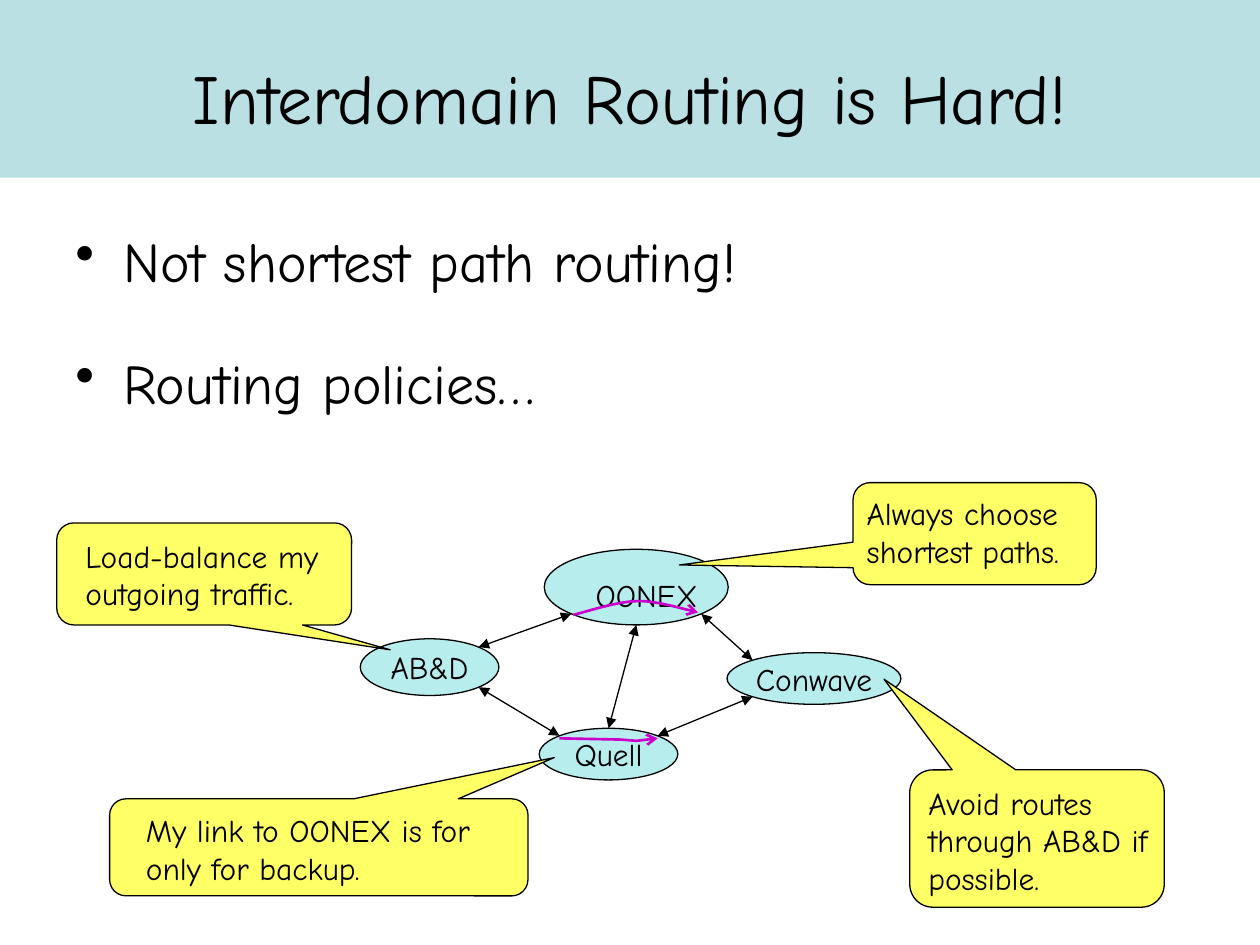
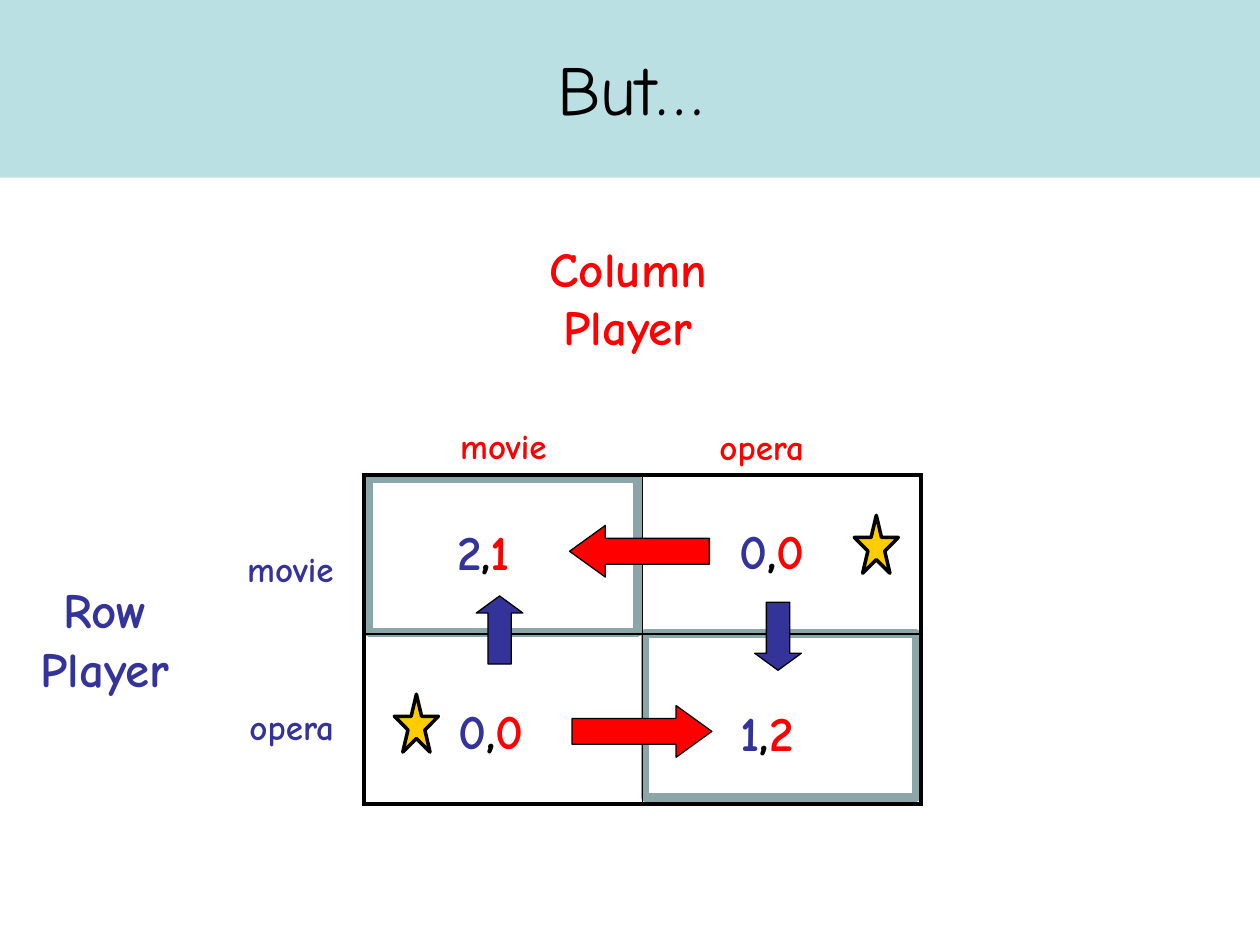
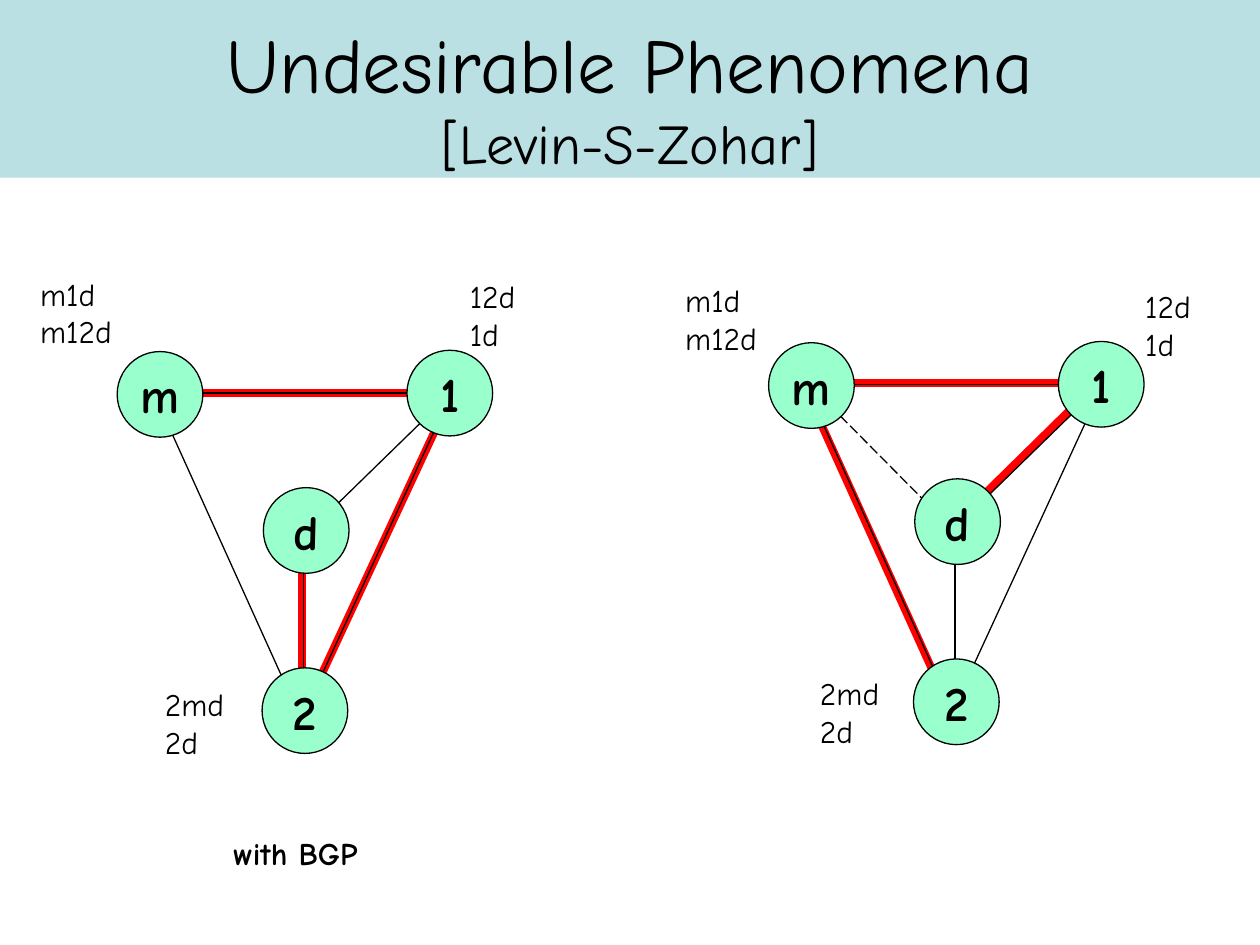
from pptx import Presentation
from pptx.dml.color import RGBColor
from pptx.enum.dml import MSO_LINE
from pptx.enum.shapes import MSO_CONNECTOR, MSO_SHAPE
from pptx.enum.text import MSO_ANCHOR, PP_ALIGN
from pptx.oxml.ns import qn
from pptx.util import Inches, Pt
from lxml import etree

RECT = MSO_SHAPE.RECTANGLE
OVAL = MSO_SHAPE.OVAL
BUBBLE = MSO_SHAPE.ROUNDED_RECTANGULAR_CALLOUT
DOWN = MSO_SHAPE.DOWN_ARROW
RIGHT = MSO_SHAPE.RIGHT_ARROW
STAR = MSO_SHAPE.STAR_5_POINT
STRAIGHT = MSO_CONNECTOR.STRAIGHT
DASH = MSO_LINE.LONG_DASH
CENTER, LEFT = PP_ALIGN.CENTER, PP_ALIGN.LEFT
TOP, MIDDLE, BOTTOM = MSO_ANCHOR.TOP, MSO_ANCHOR.MIDDLE, MSO_ANCHOR.BOTTOM

FONT = "Comic Neue"
BLACK, RED, BLUE = "000000", "FF0000", "333399"
BAND, TEAL, YELLOW = "BBE0E3", "33CCCC", "FFFF66"
MINT, GOLD, GRAY, PURPLE = "99FFCC", "FFCC00", "8AA6A8", "CC00CC"
DIAG = 0.5 ** 0.5


def rgb(code):
    return RGBColor.from_string(code)


def add_tag(parent, tag, **attrs):
    return etree.SubElement(parent, qn(tag), attrs)


def write(frame, paras, size=18, color=BLACK, bold=False, align=LEFT,
          anchor=TOP, wrap=True, gap=0, bullet=None):
    frame.word_wrap = wrap
    frame.vertical_anchor = anchor
    for i, runs in enumerate(paras):
        para = frame.paragraphs[0] if i == 0 else frame.add_paragraph()
        para.alignment = align
        para.space_before = Pt(gap if i else 0)
        if bullet:
            props = para._p.get_or_add_pPr()
            props.set("marL", str(Inches(0.38)))
            props.set("indent", str(-Inches(0.38)))
            add_tag(props, "a:buChar", char=bullet)
        for part in [(runs, {})] if isinstance(runs, str) else runs:
            words, own = part
            run = para.add_run()
            run.text = words
            run.font.name = FONT
            run.font.size = Pt(own.get("size", size))
            run.font.bold = bold
            run.font.color.rgb = rgb(own.get("color", color))


def add_text(slide, box, *paras, **style):
    area = slide.shapes.add_textbox(*map(Inches, box))
    write(area.text_frame, paras, **style)


def add_form(slide, kind, box, fill=None, line=BLACK, width=0.75,
             turn=0, adj=(), alpha=None):
    form = slide.shapes.add_shape(kind, *map(Inches, box))
    form.shadow.inherit = False
    form.rotation = turn
    for i, value in enumerate(adj):
        form.adjustments[i] = value
    if fill:
        form.fill.solid()
        form.fill.fore_color.rgb = rgb(fill)
        if alpha:
            tint = form._element.spPr.find(qn("a:solidFill"))[0]
            add_tag(tint, "a:alpha", val=str(alpha * 1000))
    else:
        form.fill.background()
    if line:
        form.line.color.rgb = rgb(line)
        form.line.width = Pt(width)
    else:
        form.line.fill.background()
    return form


def add_head(form, head=None, tail=None):
    line = form._element.spPr.find(qn("a:ln"))
    for tag, kind in (("a:headEnd", head), ("a:tailEnd", tail)):
        if kind:
            add_tag(line, tag, type=kind)


def add_line(slide, start, end, color=BLACK, width=0.75, dash=None):
    link = slide.shapes.add_connector(STRAIGHT, *map(Inches, (*start, *end)))
    link.line.color.rgb = rgb(color)
    link.line.width = Pt(width)
    if dash:
        link.line.dash_style = dash
    add_tag(link._element.spPr, "a:effectLst")
    return link


def bend(a, b, c, d, steps=8):
    for i in range(1, steps + 1):
        t = i / steps
        u = 1 - t
        yield tuple(u**3 * p + 3 * u * u * t * q + 3 * u * t * t * r + t**3 * s
                    for p, q, r, s in zip(a, b, c, d))


def add_trail(slide, start, points):
    pen = slide.shapes.build_freeform(*map(Inches, start))
    pen.add_line_segments([(Inches(x), Inches(y)) for x, y in points],
                          close=False)
    trail = pen.convert_to_shape()
    trail.shadow.inherit = False
    trail.fill.background()
    trail.line.color.rgb = rgb(PURPLE)
    trail.line.width = Pt(1.5)
    add_head(trail, tail="arrow")


def new_slide(deck, *title, top=0.14, size=40):
    slide = deck.slides.add_slide(deck.slide_layouts[6])
    add_form(slide, RECT, (0, 0, 10, 1.41), BAND, None)
    add_text(slide, (0.5, top, 9, 1.25), *title, size=size, align=CENTER,
             anchor=MIDDLE)
    return slide


def rim(box, right, down):
    left, top, width, height = box
    scale = DIAG if right and down else 1
    return (left + width / 2 * (1 + right * scale),
            top + height / 2 * (1 + down * scale))


def add_note(slide, box, tip, area, *lines):
    add_form(slide, BUBBLE, box, YELLOW, turn=180, adj=(*tip, 0.167))
    add_text(slide, area, *lines)


def hard_slide(deck):
    slide = new_slide(deck, "Interdomain Routing is Hard!")
    add_text(slide, (0.5, 1.75, 9, 4.95), "Not shortest path routing!",
             "Routing policies…", size=32, gap=31, bullet="•")

    west = (2.86, 5.07, 1.1, 0.45)
    south = (4.28, 5.78, 1.1, 0.41)
    north = (4.32, 4.36, 1.46, 0.6)
    east = (5.77, 5.18, 1.38, 0.41)
    for box, name in ((west, "AB&D"), (south, "Quell"), (north, None),
                      (east, "Conwave")):
        node = add_form(slide, OVAL, box, TEAL, alpha=35)
        if name:
            write(node.text_frame, [name], align=CENTER, anchor=MIDDLE,
                  wrap=False)
    add_text(slide, (4.63, 4.52, 1.1, 0.4), "OONEX")

    for start, end in ((rim(south, 1, -1), rim(east, -1, 1)),
                       (rim(west, 1, -1), rim(north, -1, 1)),
                       (rim(west, 1, 1), rim(south, -1, -1)),
                       (rim(south, 0, -1), rim(north, 0, 1)),
                       (rim(east, -1, -1), rim(north, 1, 1))):
        add_head(add_line(slide, start, end), "triangle", "triangle")

    start, peak = (4.55, 4.88), (5.07, 4.77)
    add_trail(slide, start, [
        *bend(start, (4.64, 4.86), (4.9, 4.77), peak),
        *bend(peak, (5.23, 4.77), (5.44, 4.84), (5.54, 4.86))])
    add_trail(slide, (4.44, 5.86), [(4.93, 5.87), (5.05, 5.88), (5.22, 5.86)])

    add_note(slide, (0.87, 6.34, 3.32, 0.77), (-0.563, 0.925),
             (1.06, 6.39, 3.03, 0.71),
             "My link to OONEX is for only for backup.")
    add_note(slide, (0.45, 4.15, 2.34, 0.81), (-0.631, -0.744),
             (0.58, 4.21, 2.15, 0.71), "Load-balance my", "outgoing traffic.")
    add_note(slide, (6.77, 3.83, 1.93, 0.81), (1.214, -0.307),
             (6.78, 3.87, 2.01, 0.71), "Always choose", "shortest paths.")
    add_note(slide, (7.22, 6.11, 2.02, 1.09), (0.601, 1.16),
             (7.27, 6.17, 2.08, 1.01),
             "Avoid routes through AB&D if possible.")


def add_edge(cell, tag, width):
    props = cell._tc.get_or_add_tcPr()
    edge = add_tag(props, tag, w=str(Pt(width)))
    add_tag(add_tag(edge, "a:solidFill"), "a:srgbClr", val=BLACK)


def add_grid(slide):
    grid = slide.shapes.add_table(
        2, 2, *map(Inches, (2.89, 3.77, 4.42, 2.61))).table
    grid.first_row = grid.horz_banding = False
    for row, height in zip(grid.rows, (1.26, 1.35)):
        row.height = Inches(height)
    for r in range(2):
        for c in range(2):
            cell = grid.cell(r, c)
            for tag, outer in (("a:lnL", c == 0), ("a:lnR", c == 1),
                               ("a:lnT", r == 0), ("a:lnB", r == 1)):
                add_edge(cell, tag, 2.25 if outer else 1)
            cell.fill.background()


def game_slide(deck):
    slide = new_slide(deck, "But…", top=0.07)
    for box in ((2.93, 3.8, 2.13, 1.22), (5.12, 5.03, 2.15, 1.3)):
        add_form(slide, RECT, box, line=GRAY, width=5)
    add_grid(slide)

    for x, y, turn in ((5.99, 4.78, 0), (3.78, 4.73, 180)):
        add_form(slide, DOWN, (x, y, 0.37, 0.54), BLUE, turn=turn,
                 adj=(0.5, 0.364))
    for x, y, turn in ((4.54, 5.6, 0), (4.52, 4.17, 180)):
        add_form(slide, RIGHT, (x, y, 1.11, 0.41), RED, turn=turn,
                 adj=(0.5, 0.693))

    for box, name, color in (((0.15, 4.55, 1.37, 1.03), "Row", BLUE),
                             ((4.25, 1.84, 1.47, 1.04), "Column", RED)):
        add_text(slide, box, name, "Player", size=28, color=color, bold=True,
                 align=CENTER, wrap=False)
    for x, y, move, color in ((1.83, 4.3, "movie", BLUE),
                              (1.84, 5.55, "opera", BLUE),
                              (3.52, 3.32, "movie", RED),
                              (5.57, 3.33, "opera", RED)):
        add_text(slide, (x, y, 0.95, 0.44), move, size=20, color=color,
                 bold=True, align=CENTER, wrap=False)
    for x, y, row, col in ((3.53, 4.09, "2", "1"), (5.77, 4.08, "0", "0"),
                           (5.78, 5.53, "1", "2"), (3.54, 5.51, "0", "0")):
        pair = [(row, {"color": BLUE}), (",", {}), (col, {"color": RED})]
        add_text(slide, (x, y, 1.01, 1.04), pair, size=28, bold=True)
    for x, y in ((3.13, 5.51), (6.78, 4.09)):
        add_form(slide, STAR, (x, y, 0.35, 0.46), GOLD, width=2)


def add_graph(slide, dx, dy, routes, labels):
    for start, end in routes:
        add_line(slide, start, end, RED, 4.5)
    for x1, y1, x2, y2 in ((1.22, 3.12, 2.35, 5.62), (2.41, 5.67, 2.41, 4.25),
                           (3.57, 3.13, 2.39, 4.28), (1.25, 3.12, 3.59, 3.12),
                           (2.46, 5.56, 3.59, 3.11)):
        add_line(slide, (x1 + dx, y1 + dy), (x2 + dx, y2 + dy))
    for x, y, name in ((0.93, 2.79, "m"), (3.23, 2.78, "1"),
                       (2.08, 5.3, "2"), (2.09, 3.87, "d")):
        node = add_form(slide, OVAL, (x + dx, y + dy, 0.68, 0.68), MINT)
        write(node.text_frame, [name], size=28, bold=True, align=CENTER,
              anchor=MIDDLE, wrap=False)
    prefs = (("m1d", "m12d"), ("2md", "2d"), ("12d", "1d"))
    for (x, y), width, lines in zip(labels, (0.83, 0.7, 0.62), prefs):
        add_text(slide, (x, y, width, 0.7), *lines)


def graph_slide(deck):
    slide = new_slide(deck, "Undesirable Phenomena",
                      [("[Levin-S-Zohar]", {"size": 32})], size=44)
    add_line(slide, (6.43, 3.06), (7.59, 4.23), dash=DASH)
    add_graph(slide, 5.17, -0.07,
              (((6.39, 3.04), (8.73, 3.04)), ((6.37, 3.04), (7.5, 5.54)),
               ((8.7, 3.05), (7.52, 4.21))),
              ((5.34, 2.18), (6.41, 5.3), (8.99, 2.23)))
    add_graph(slide, 0, 0,
              (((2.4, 5.66), (2.4, 4.25)), ((2.4, 5.68), (3.54, 3.23)),
               ((1.28, 3.12), (3.62, 3.12))),
              ((0.22, 2.13), (1.21, 5.39), (3.63, 2.15)))
    add_text(slide, (0.61, 6.14, 3.47, 0.83), "with BGP", bold=True,
             align=CENTER, anchor=BOTTOM)


def main():
    deck = Presentation()
    deck.slide_width, deck.slide_height = Inches(10), Inches(7.5)
    hard_slide(deck)
    game_slide(deck)
    graph_slide(deck)
    deck.save("out.pptx")


if __name__ == "__main__":
    main()
